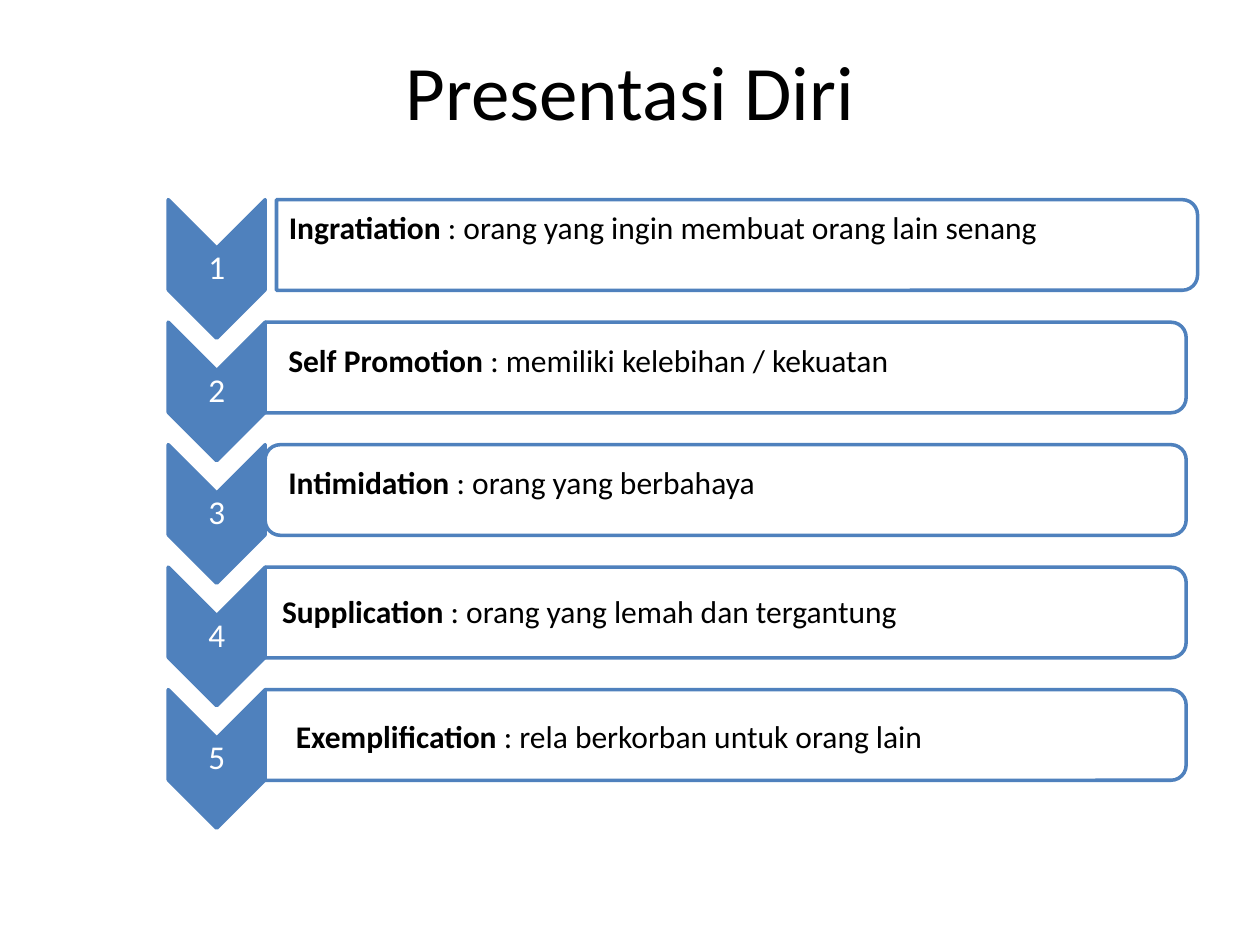
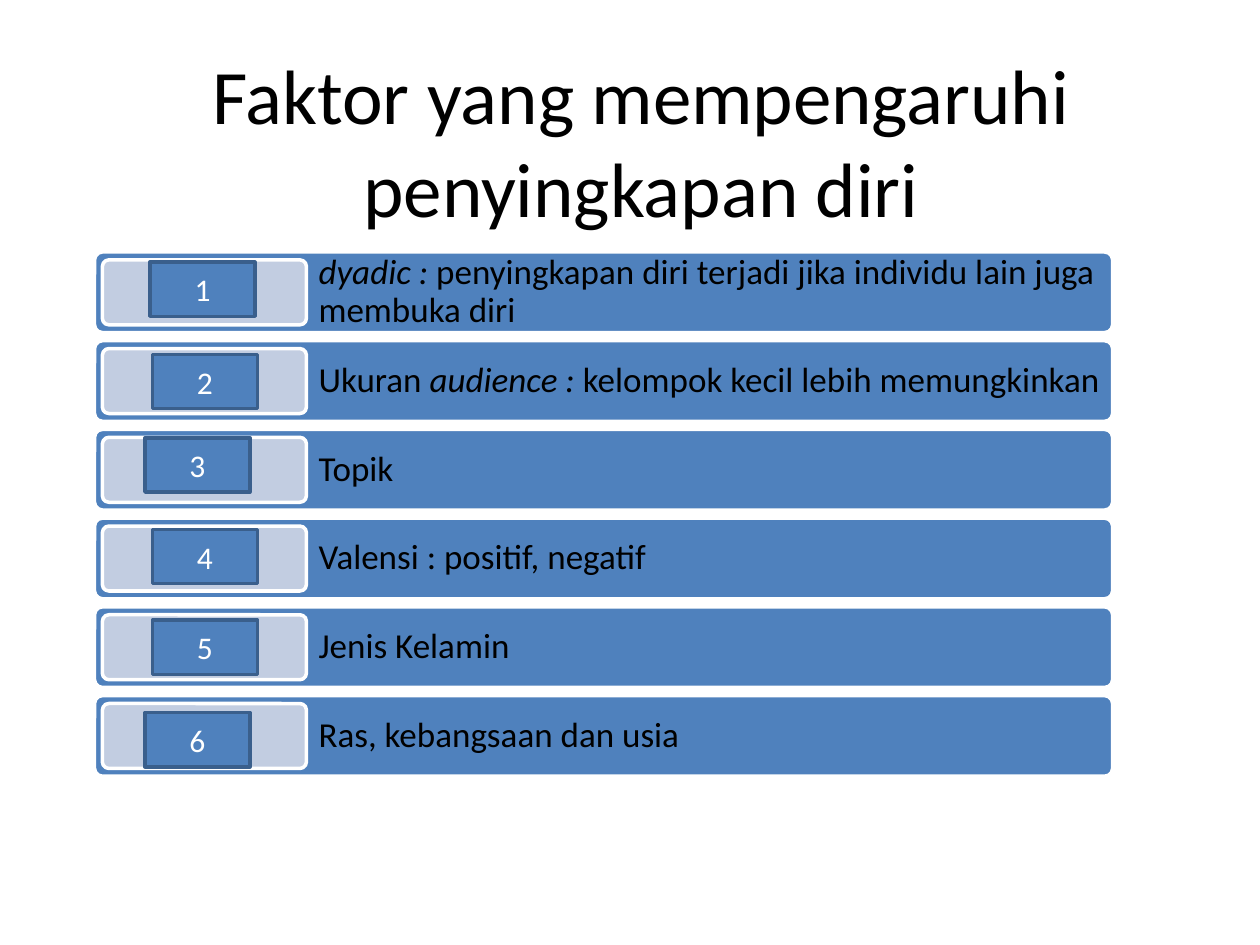
from dataclasses import dataclass

from lxml import etree
from pptx import Presentation
from pptx.dml.color import RGBColor as RGB
from pptx.enum.shapes import MSO_SHAPE as SHAPE
from pptx.enum.text import MSO_ANCHOR as ANCHOR, MSO_AUTO_SIZE as AUTO, PP_ALIGN as ALIGN
from pptx.oxml.ns import qn
from pptx.util import Pt


@dataclass(frozen=True)
class Theme:
    font: str = "Calibri"
    black: str = "000000"
    white: str = "FFFFFF"
    blue: str = "4F81BD"
    dark_blue: str = "3A5F8C"
    pale_blue: str = "C2CDE1"
    title: int = 44
    factor: int = 20
    chevron: int = 19
    body: int = 18
    line: int = 2


T = Theme()

# Runs are (text, style) pairs; row entries add the text offset within the row
STRATEGIES = [
    ([("Ingratiation", "b"), (" : orang yang ingin membuat orang lain senang", "")],
     61.9, 1, None),
    ([("Self Promotion ", "b"), (": memiliki kelebihan / kekuatan", "")], 61.6, 6, 1.07),
    ([("Intimidation", "b"), (" : orang yang berbahaya", "")], 61.6, 9.4, 0.9),
    ([("Supplication", "b"), (" : orang yang lemah dan tergantung", "")], 58, 9.2, 1.07),
    ([("Exemplification", "b"), (" : rela berkorban untuk orang lain", "")], 65.9, 10.4, 1.07),
]
FACTORS = [
    ([("dyadic : ", "i"),
      ("penyingkapan diri terjadi jika individu lain juga membuka diri", "")], 31.7, 5.8),
    ([("Ukuran ", ""), ("audience : ", "i"), ("kelompok kecil lebih memungkinkan", "")],
     33.1, 7.9),
    ([("Topik", "")], 28.8, 4.8),
    ([("Valensi : positif, negatif", "")], 33.1, 6.5),
    ([("Jenis Kelamin", "")], 33.1, 7.6),
    ([("Ras, kebangsaan dan usia", "")], 28.8, 9.7),
]


def write(s, runs, size, color=T.black, align=ALIGN.LEFT, anchor=ANCHOR.TOP,
          insets=(7.2, 3.6, 7.2, 3.6), spacing=None, after=0):
    """Fill a shape with one paragraph of styled runs."""
    tf = s.text_frame
    tf.word_wrap = True
    tf.vertical_anchor = anchor
    tf.margin_left, tf.margin_top, tf.margin_right, tf.margin_bottom = map(Pt, insets)
    p = tf.paragraphs[0]
    p.alignment = align
    p.space_after = Pt(after)
    if spacing:
        p.line_spacing = spacing
    for text, style in [(runs, "")] if isinstance(runs, str) else runs:
        r = p.add_run()
        r.text = text
        r.font.name, r.font.size = T.font, Pt(size)
        r.font.bold, r.font.italic = style == "b", style == "i"
        r.font.color.rgb = RGB.from_string(color)
    return tf


def add_text(slide, box, runs, size, **fmt):
    return write(slide.shapes.add_textbox(*map(Pt, box)), runs, size, **fmt)


def add_shape(slide, kind, box, fill, line, adjust=()):
    s = slide.shapes.add_shape(kind, *map(Pt, box))
    s.shadow.inherit = False
    s.fill.solid()
    s.fill.fore_color.rgb = RGB.from_string(fill)
    s.line.color.rgb = RGB.from_string(line)
    s.line.width = Pt(T.line)
    for i, value in enumerate(adjust):
        s.adjustments[i] = value
    return s


def add_turned(slide, kind, box, *style):
    """Add a shape turned a quarter clockwise that covers the box as seen."""
    x, y, w, h = box
    s = add_shape(slide, kind, (x + (w - h) / 2, y + (h - w) / 2, h, w), *style)
    s.rotation = 90
    return s


def add_title(slide, box, text):
    add_text(slide, box, text, T.title, align=ALIGN.CENTER)


def strategy_list(slide, box):
    """Numbered chevrons, each leading to an outlined bar."""
    x, y, w, h = box
    step, chevron_w, chevron_h, bar_h = 70, 55.4, 79.2, 51.8
    bar_w = w - chevron_w
    for i, (runs, dx, dy, spacing) in enumerate(STRATEGIES):
        top = y + i * step
        # Chevron with upright number
        s = add_turned(slide, SHAPE.CHEVRON, (x, top, chevron_w, chevron_h),
                       T.blue, T.blue, (0.5,))
        write(s, str(i + 1), T.chevron, color=T.white, align=ALIGN.CENTER,
              anchor=ANCHOR.MIDDLE, insets=(0.7,) * 4, spacing=0.9, after=6.7)
        s.element.txBody.find(qn("a:bodyPr")).set("vert", "vert270")
        # Bar: the first sits further right, the third is rounded at both ends
        kind, adjust = SHAPE.ROUND_2_SAME_RECTANGLE, (0.167, 0)
        if i == 2:
            kind, adjust = SHAPE.FLOWCHART_ALTERNATE_PROCESS, ()
        left = x + chevron_w + (6.5 if i == 0 else 0)
        bar = add_turned(slide, kind, (left, top, bar_w, bar_h), T.white, T.blue, adjust)
        color = bar.element.spPr.find(qn("a:solidFill"))[0]
        etree.SubElement(color, qn("a:alpha")).set("val", "90000")
        # Explanation
        tf = add_text(slide, (x + dx, top + dy, 498, 29), runs, T.body,
                      spacing=spacing, after=8 if spacing == 1.07 else 0)
        tf.auto_size = AUTO.SHAPE_TO_FIT_TEXT


def factor_list(slide, box):
    """Filled bars, each with a pale plate and a number tag."""
    x, y, w, h = box
    bar_h, pad, plate_w = 46.1, 4.5, 116.6
    step = (h - bar_h) / (len(FACTORS) - 1)
    for i, (runs, dx, dy) in enumerate(FACTORS):
        top = y + i * step
        bar = add_shape(slide, SHAPE.ROUNDED_RECTANGLE, (x, top, w, bar_h),
                        T.blue, T.white, (0.1,))
        write(bar, runs, T.factor, anchor=ANCHOR.MIDDLE,
              insets=(126.7, 5.8, 5.8, 5.8), spacing=0.9, after=7)
        add_shape(slide, SHAPE.ROUNDED_RECTANGLE,
                  (x + pad, top + pad, plate_w, bar_h - 2 * pad),
                  T.pale_blue, T.white, (0.1,))
        tag = add_shape(slide, SHAPE.RECTANGLE, (x + dx, top + dy, 60, 31),
                        T.blue, T.dark_blue)
        write(tag, str(i + 1), T.body, color=T.white,
              align=ALIGN.CENTER, anchor=ANCHOR.MIDDLE)


def main():
    prs = Presentation()
    prs.slide_width, prs.slide_height = Pt(720), Pt(540)
    blank = prs.slide_layouts[6]

    # Self-presentation strategies
    slide = prs.slides.add_slide(blank)
    add_title(slide, (36, 21.6, 648, 90), "Presentasi Diri")
    strategy_list(slide, (96.1, 114.1, 581.7, 359.2))

    # Factors of self-disclosure
    slide = prs.slides.add_slide(blank)
    add_title(slide, (59.8, 23.8, 613.4, 115.2), "Faktor yang mempengaruhi penyingkapan diri")
    factor_list(slide, (54, 144, 581.8, 299.6))

    prs.save("out.pptx")


if __name__ == "__main__":
    main()
